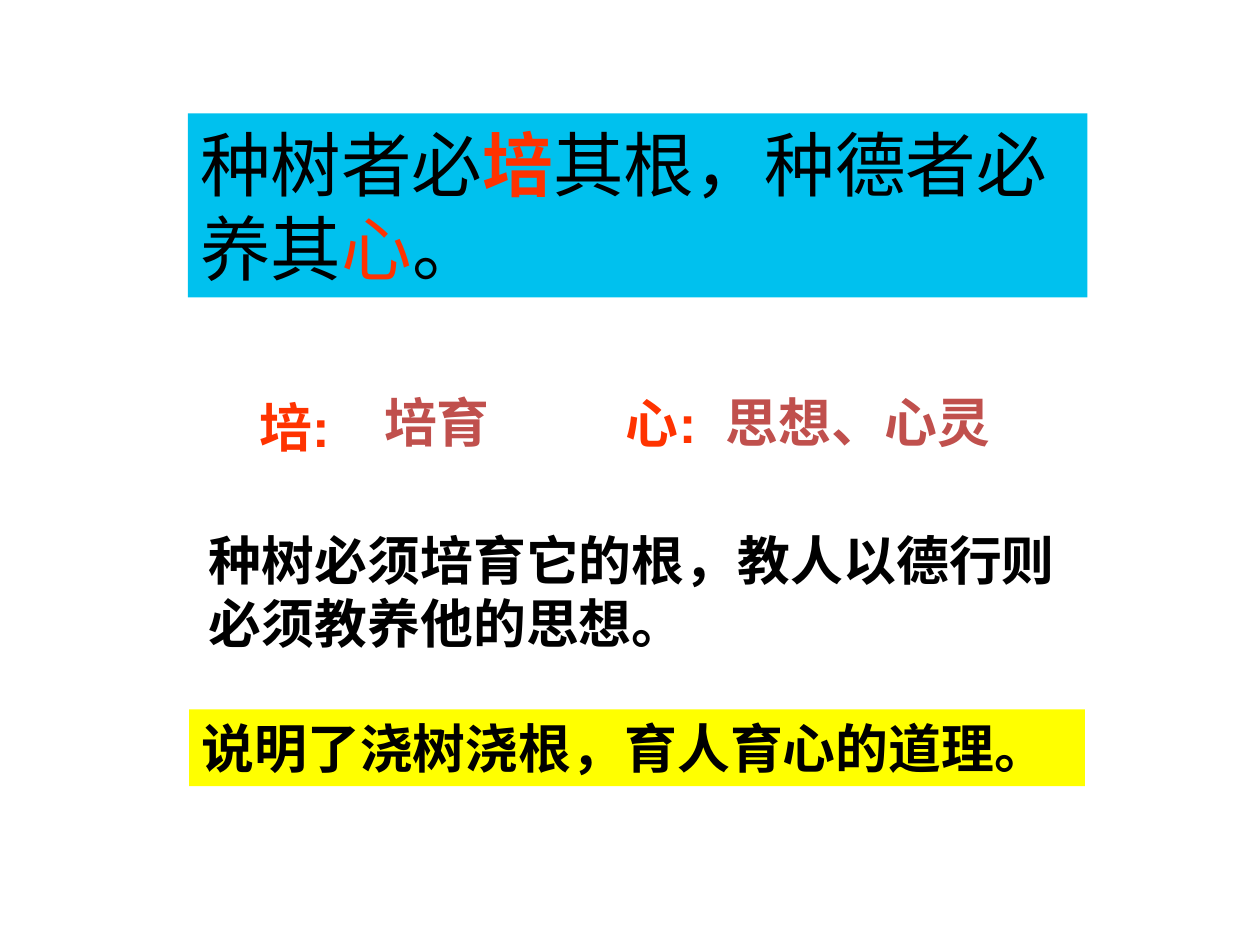
import dataclasses
import pptx
import pptx.dml.color
import pptx.enum.text
import pptx.util

Inches = pptx.util.Inches
Text = pptx.enum.text


@dataclasses.dataclass(frozen=True)
class Theme:
    font: str = "Arial"
    large: float = 40.3
    body: float = 30.2
    ink: str = "000000"
    key: str = "FF3300"
    gloss: str = "C0504D"
    sky: str = "00C1EE"
    sun: str = "FFFF00"


THEME = Theme()


def color(code):
    return pptx.dml.color.RGBColor.from_string(code)


def paint(shape, code):
    shape.fill.solid()
    shape.fill.fore_color.rgb = color(code)


def write(shape, runs, size, middle=True, wrap=True):
    """Fill a shape with runs of (text, colour, bold)."""
    frame = shape.text_frame
    frame.word_wrap = wrap
    frame.auto_size = Text.MSO_AUTO_SIZE.SHAPE_TO_FIT_TEXT
    anchor = Text.MSO_ANCHOR
    frame.vertical_anchor = anchor.MIDDLE if middle else anchor.TOP
    line = frame.paragraphs[0]
    line.alignment = Text.PP_ALIGN.LEFT
    for words, code, bold in runs:
        run = line.add_run()
        run.text = words
        run.font.name = THEME.font
        run.font.size = pptx.util.Pt(size)
        run.font.bold = bold
        run.font.color.rgb = color(code)


def add_quote(slide, left, top, width, height):
    title = slide.shapes.title
    title.left, title.top = Inches(left), Inches(top)
    title.width, title.height = Inches(width), Inches(height)
    paint(title, THEME.sky)
    write(title, [
        ("种树者必", THEME.ink, False),
        ("培", THEME.key, True),
        ("其根，种德者必养其", THEME.ink, False),
        ("心", THEME.key, False),
        ("。", THEME.ink, False),
    ], THEME.large)


def add_note(slide, box, words, code=THEME.ink, fill=None, **layout):
    note = slide.shapes.add_textbox(*map(Inches, box))
    if fill:
        paint(note, fill)
    write(note, [(words, code, True)], THEME.body, **layout)


def add_term(slide, left, top, word, sense, gap, drop, width):
    """Place a key word and, gap inches to its right, its meaning."""
    high = 0.61
    add_note(slide, (left, top + drop, 0.77, high), word, THEME.key,
             middle=False, wrap=False)
    add_note(slide, (left + gap, top, width, high), sense, THEME.gloss,
             middle=False)


def main():
    deck = pptx.Presentation()
    deck.slide_width, deck.slide_height = Inches(10), Inches(7.5)
    slide = deck.slides.add_slide(deck.slide_layouts.get_by_name("Title Only"))
    add_quote(slide, 1.49, 0.9, 7.14, 1.46)
    add_term(slide, 1.96, 3.04, "培:", "培育", 0.99, 0.04, 1.06)
    add_term(slide, 4.87, 3.04, "心:", "思想、心灵", 0.79, 0.01, 2.45)
    add_note(slide, (1.56, 4.13, 7.14, 1.12),
             "种树必须培育它的根，教人以德行则必须教养他的思想。")
    add_note(slide, (1.5, 5.63, 7.11, 0.61),
             "说明了浇树浇根，育人育心的道理。", fill=THEME.sun, wrap=False)
    deck.save("out.pptx")


if __name__ == "__main__":
    main()
